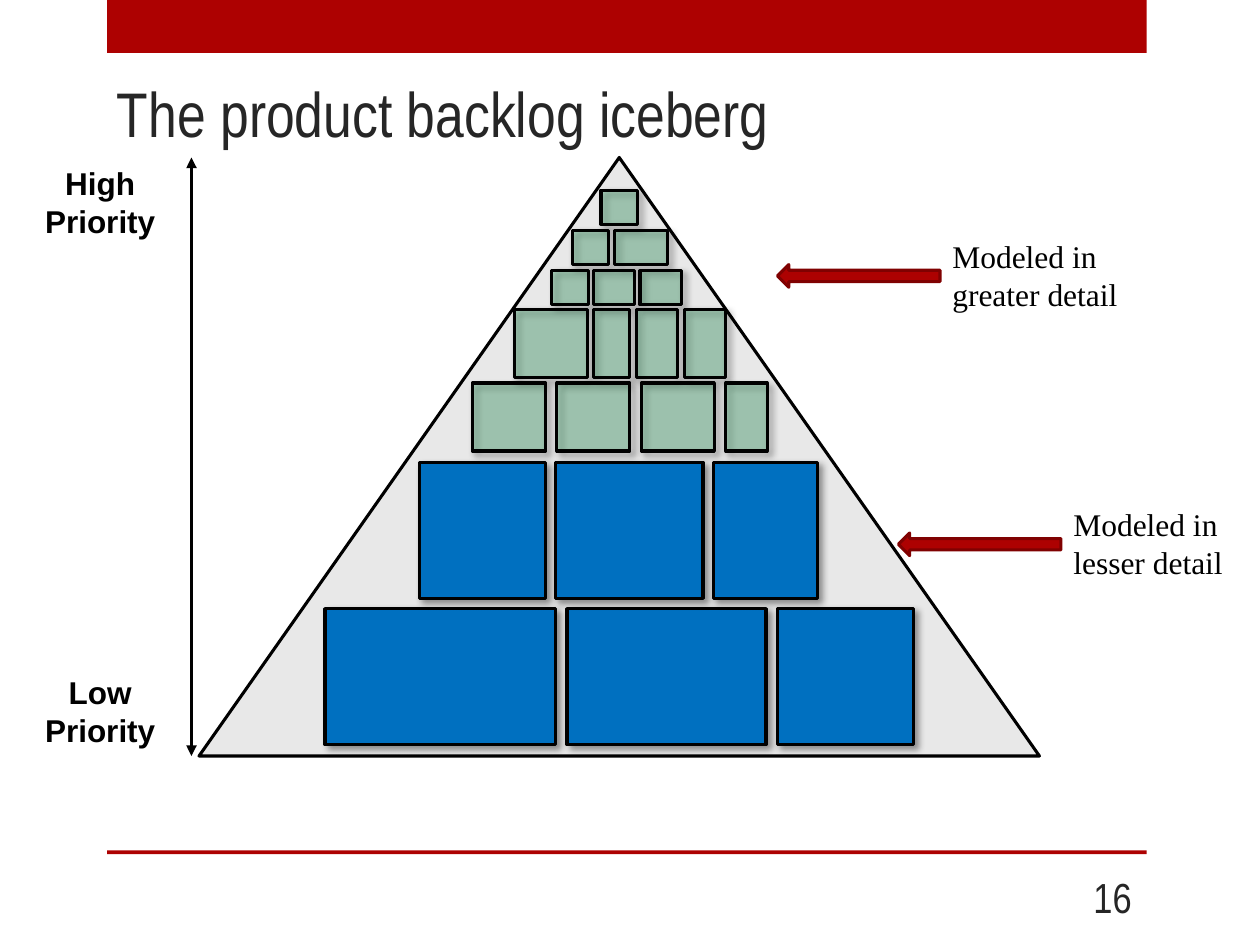
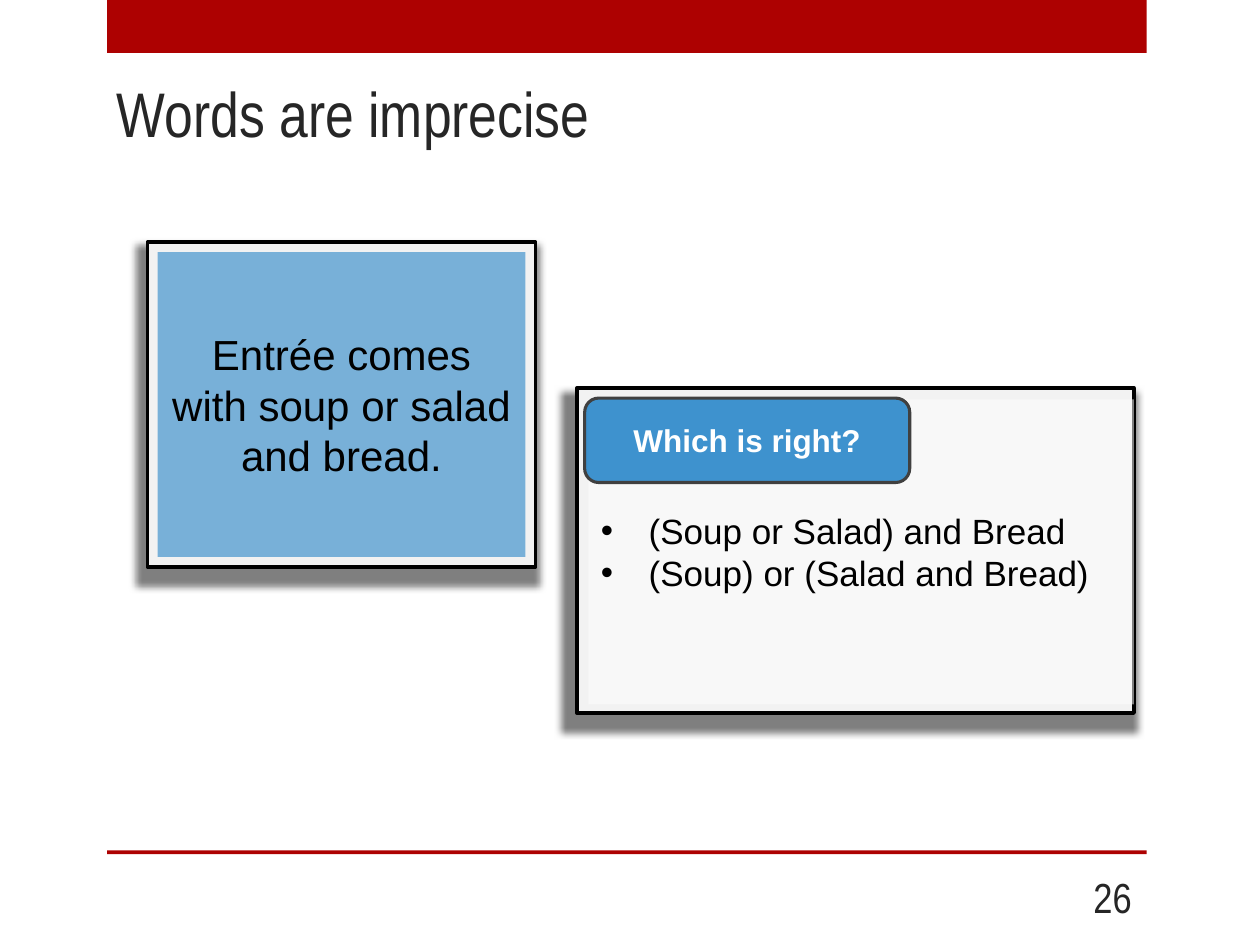
from lxml import etree
from pptx import Presentation
from pptx import util as u
from pptx.dml.color import RGBColor
from pptx.enum import shapes, text
from pptx.oxml import ns

RED, DARK_RED, INK, BLACK, WHITE = "AD0101", "800101", "262626", "000000", "FFFFFF"
BLUE, GREEN, GREY, PAPER, EDGE = "0070C0", "009242", "A6A6A6", "F2F2F2", "404040"
SANS, NARROW, SERIF = "Arial", "Arial Narrow", "Times New Roman"
CENTER, RIGHT = text.PP_ALIGN.CENTER, text.PP_ALIGN.RIGHT
SHAPE = shapes.MSO_SHAPE


def rgb(value):
    """Turn a hex string into a colour."""
    return RGBColor.from_string(value)


def add_xml(parent, tag, **attributes):
    """Append a drawing element to a parent and return it."""
    return etree.SubElement(parent, ns.qn(tag), attributes)


class Deck:
    """Shared style of the deck and the slide being filled."""

    def __init__(self):
        """Open an empty deck of 10 by 7.5 inches."""
        self.show = Presentation()
        self.show.slide_width, self.show.slide_height = u.Inches(10), u.Inches(7.5)
        self.slide = None

    def start(self, title, number):
        """Begin a slide with its band, rule, title and page number."""
        self.slide = self.show.slides.add_slide(self.show.slide_layouts[6])
        self.shape((0.85, 0, 8.25, 0.42), RED)
        self.shape((0.85, 6.75, 8.25, 0.03), RED)
        self.label((0.83, 0.53, 8.25, 0.72), [title], 36, NARROW, INK, middle=True)
        self.label((8.25, 6.92, 0.83, 0.4), [str(number)], 24, NARROW, INK,
                   align=RIGHT, middle=True)

    def shape(self, box, fill, line=None, width=1.75, kind=SHAPE.RECTANGLE,
              opacity=100, shadow=None):
        """Draw a preset shape and return it."""
        drawn = self.slide.shapes.add_shape(kind, *map(u.Inches, box))
        drawn.shadow.inherit = False
        drawn.fill.solid()
        drawn.fill.fore_color.rgb = rgb(fill)
        if opacity < 100:
            tint = drawn._element.spPr.find(".//" + ns.qn("a:srgbClr"))
            add_xml(tint, "a:alpha", val=str(opacity * 1000))
        if line:
            drawn.line.color.rgb = rgb(line)
            drawn.line.width = u.Pt(width)
        else:
            drawn.line.fill.background()
        if shadow:
            self.cast(drawn, **shadow)
        return drawn

    def cast(self, drawn, opacity, angle, **scale):
        """Give a shape an outer shadow."""
        effects = drawn._element.spPr.find(ns.qn("a:effectLst"))
        outer = add_xml(effects, "a:outerShdw", blurRad=str(u.Pt(4)), dist=str(u.Pt(3)),
                        dir=str(angle * 60000), **scale, rotWithShape="0")
        add_xml(add_xml(outer, "a:srgbClr", val=BLACK), "a:alpha", val=str(opacity * 1000))

    def fill_text(self, frame, lines, size, font, color, bold=False, align=None,
                  middle=False, bullets=False):
        """Fill a text frame with one paragraph for each line."""
        frame.text = "\n".join(lines)
        frame.vertical_anchor = text.MSO_ANCHOR.MIDDLE if middle else text.MSO_ANCHOR.TOP
        for paragraph in frame.paragraphs:
            paragraph.alignment = align or text.PP_ALIGN.LEFT
            if bullets:
                props = paragraph._p.get_or_add_pPr()
                props.set("marL", str(u.Inches(0.38)))
                props.set("indent", str(-u.Inches(0.38)))
                add_xml(props, "a:buFont", typeface=SANS)
                add_xml(props, "a:buChar", char="•")
            for run in paragraph.runs:
                run.font.size, run.font.name, run.font.bold = u.Pt(size), font, bold
                run.font.color.rgb = rgb(color)

    def label(self, box, lines, size, font, color, wrap=True, **style):
        """Place a text box."""
        frame = self.slide.shapes.add_textbox(*map(u.Inches, box)).text_frame
        frame.word_wrap = wrap
        self.fill_text(frame, lines, size, font, color, **style)

    def double_arrow(self, x, bottom, top):
        """Draw a vertical line with a head at each end."""
        axis = self.slide.shapes.add_connector(
            shapes.MSO_CONNECTOR.STRAIGHT, *map(u.Inches, (x, bottom, x, top)))
        axis.line.color.rgb = rgb(BLACK)
        axis.line.width = u.Pt(2)
        stroke = axis._element.spPr.find(ns.qn("a:ln"))
        for end in ("a:headEnd", "a:tailEnd"):
            add_xml(stroke, end, type="triangle")
        add_xml(axis._element.spPr, "a:effectLst")

    def callout(self, left, top, words):
        """Place a note with a block arrow pointing left from it."""
        self.label((left, top, 1.58, 0.71), [words], 18, SERIF, BLACK)
        self.shape((left - 1.29, top + 0.27, 1.29, 0.18), RED, DARK_RED,
                   kind=SHAPE.LEFT_ARROW)

    def block_row(self, left, top, height, gap, widths, fill, opacity):
        """Lay backlog items side by side."""
        for width in widths:
            self.shape((left, top, width, height), fill, BLACK, opacity=opacity,
                       shadow={"opacity": 40, "angle": 45})
            left += width + gap

    def card(self, box):
        """Draw a framed paper card with a deep shadow."""
        self.shape(box, PAPER, BLACK, 2, shadow={
            "opacity": 50, "angle": 70, "sx": "103000", "sy": "104000", "algn": "tr"})


def iceberg(deck):
    """Build the backlog pyramid."""
    deck.start("The product backlog iceberg", 16)
    deck.shape((1.58, 1.25, 6.67, 4.75), GREY, BLACK, kind=SHAPE.ISOSCELES_TRIANGLE,
               opacity=25)
    coarse, fine = (BLUE, 100), (GREEN, 25)
    rows = [
        (2.58, 4.83, 1.08, 0.09, (1.83, 1.58, 1.08), coarse),
        (3.33, 3.67, 1.08, 0.08, (1, 1.17, 0.83), coarse),
        (3.75, 3.04, 0.54, 0.09, (0.58, 0.58, 0.58, 0.33), fine),
        (4.08, 2.46, 0.54, 0.05, (0.58, 0.29, 0.33, 0.33), fine),
        (4.38, 2.15, 0.27, 0.04, (0.29, 0.33, 0.33), fine),
        (4.54, 1.83, 0.27, 0.05, (0.29, 0.42), fine),
        (4.77, 1.51, 0.27, 0, (0.29,), fine),
    ]
    for *place, look in rows:
        deck.block_row(*place, *look)
    deck.double_arrow(1.52, 6, 1.25)
    for top, level in ((1.25, "High"), (5.29, "Low")):
        deck.label((0.25, top, 1.09, 0.71), [level, "Priority"], 18, SANS, BLACK,
                   wrap=False, bold=True, align=CENTER)
    deck.callout(7.46, 1.83, "Modeled in greater detail")
    deck.callout(8.42, 3.96, "Modeled in lesser detail")


def imprecise_words(deck):
    """Build the menu example with its two readings."""
    deck.start("Words are imprecise", 26)
    deck.card((1.17, 1.92, 3.08, 2.58))
    menu = deck.shape((1.25, 2, 2.92, 2.42), BLUE, opacity=50)
    deck.fill_text(menu.text_frame, ["Entrée comes with soup or salad and bread."],
                   24, SANS, BLACK, align=CENTER, middle=True)
    deck.card((4.58, 3.08, 4.42, 2.58))
    readings = deck.shape((4.67, 3.17, 4.33, 2.42), WHITE, opacity=50)
    deck.fill_text(readings.text_frame,
                   ["(Soup or Salad) and Bread", "(Soup) or (Salad and Bread)"],
                   20, SANS, BLACK, middle=True, bullets=True)
    question = deck.shape((4.64, 3.16, 2.58, 0.67), BLUE, EDGE,
                          kind=SHAPE.ROUNDED_RECTANGLE, opacity=75)
    deck.fill_text(question.text_frame, ["Which is right?"], 18, SANS, WHITE, bold=True,
                   align=CENTER, middle=True)


def main():
    """Build and save the deck."""
    deck = Deck()
    iceberg(deck)
    imprecise_words(deck)
    deck.show.save("out.pptx")


if __name__ == "__main__":
    main()
